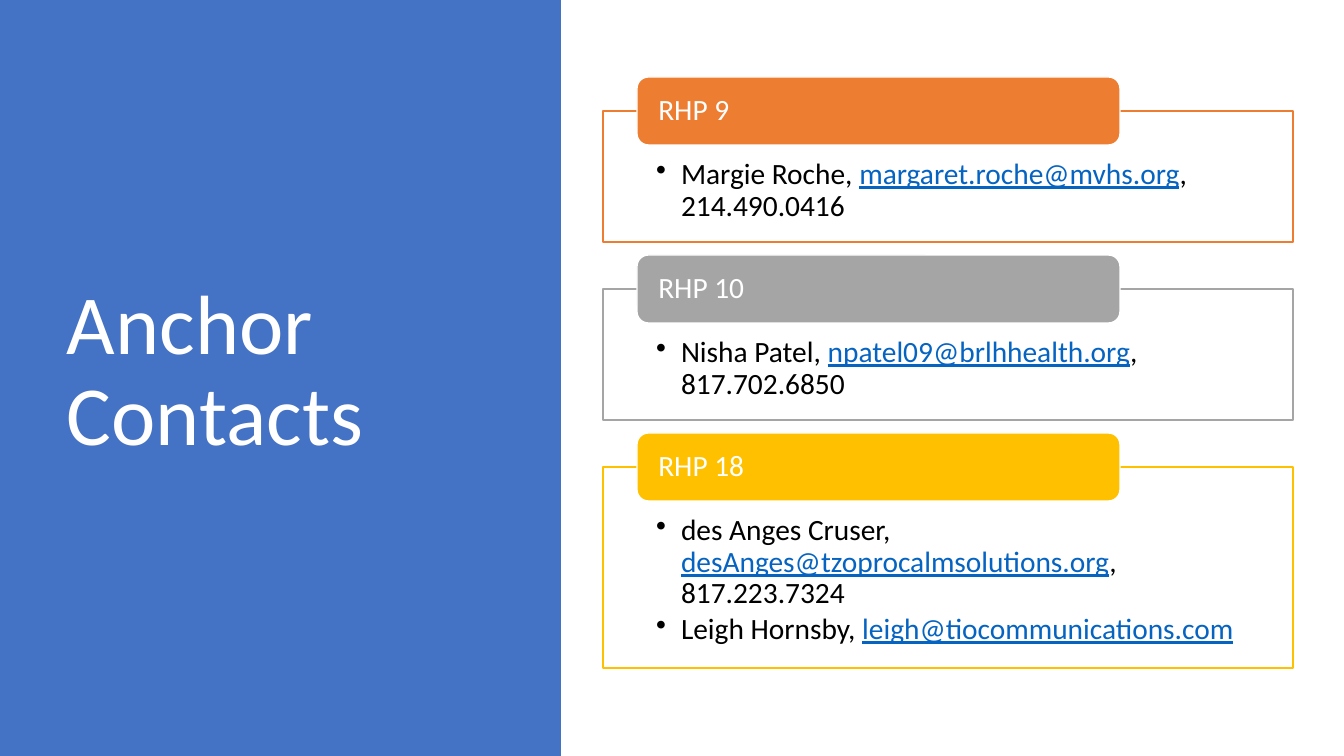
import pptx
import pptx.util
import pptx.dml.color
import pptx.enum.shapes
import pptx.enum.text
from lxml import etree

# Content: each card has a label, a colour, a height and its contacts
TITLE = "Anchor Contacts"
CARDS = [
    ("RHP 9", "orange", 131, [("Margie Roche, ", "margaret.roche@mvhs.org", ", 214.490.0416")]),
    ("RHP 10", "grey", 131, [("Nisha Patel, ", "npatel09@brlhhealth.org", ", 817.702.6850")]),
    ("RHP 18", "yellow", 201, [
        ("des Anges Cruser, ", "desAnges@tzoprocalmsolutions.org", ", 817.223.7324"),
        ("Leigh Hornsby, ", "leigh@tiocommunications.com", ""),
    ]),
]
COLORS = {
    "blue": "4472C4", "orange": "ED7D31", "grey": "A5A5A5", "yellow": "FFC000",
    "white": "FFFFFF", "black": "000000", "link": "0563C1",
}
FONT = "Calibri"

# Layout in px
SLIDE_W, SLIDE_H = 1344, 756
PANEL_W = 561
CARD_LEFT, CARD_TOP, CARD_W, CARD_GAP = 603, 111, 690, 47
TAB_LEFT, TAB_W, TAB_H = 637, 483, 68
BULLET_INDENT = 25
SHAPES = pptx.enum.shapes.MSO_SHAPE
ANCHORS = pptx.enum.text.MSO_ANCHOR


def px(length):
    return pptx.util.Emu(round(length * 914400 / 100.8))


def color(name):
    return pptx.dml.color.RGBColor.from_string(COLORS[name])


def add_block(page, kind, place, fill, line=None):
    shape = page.shapes.add_shape(kind, *map(px, place))
    shape.shadow.inherit = False
    shape.fill.solid()
    shape.fill.fore_color.rgb = color(fill)
    if line:
        shape.line.color.rgb = color(line)
        shape.line.width = pptx.util.Pt(1)
    else:
        shape.line.fill.background()
    return shape


def set_frame(shape, anchor, left, top, right, bottom):
    frame = shape.text_frame
    frame.word_wrap = True
    frame.vertical_anchor = anchor
    frame.margin_left, frame.margin_top = px(left), px(top)
    frame.margin_right, frame.margin_bottom = px(right), px(bottom)
    return frame


def style_para(para, size, names):
    para.alignment = pptx.enum.text.PP_ALIGN.LEFT
    para.line_spacing = 0.9
    for span, name in zip(para.runs, names):
        span.font.name = FONT
        span.font.size = pptx.util.Pt(size)
        span.font.color.rgb = color(name)
        span.font.underline = name == "link"


def add_bullet(para):
    props = para._p.get_or_add_pPr()
    props.set("marL", str(px(BULLET_INDENT)))
    props.set("indent", str(-px(BULLET_INDENT)))
    bullet = etree.SubElement(props, pptx.oxml.ns.qn("a:buChar"))
    bullet.set("char", "•")


def add_card(page, top, label, accent, height, contacts):
    # Outlined box with the contacts
    box = add_block(page, SHAPES.RECTANGLE, (CARD_LEFT, top, CARD_W, height), "white", accent)
    frame = set_frame(box, ANCHORS.TOP, 53, 48, 53, 16)
    for index, contact in enumerate(contacts):
        para = frame.add_paragraph() if index else frame.paragraphs[0]
        for words in filter(None, contact):
            para.add_run().text = words
        style_para(para, 21, ("black", "link", "black"))
        para.space_after = pptx.util.Pt(3)
        add_bullet(para)

    # Label tab centred on the top edge of the box
    place = (TAB_LEFT, top - TAB_H // 2, TAB_W, TAB_H)
    tab = add_block(page, SHAPES.ROUNDED_RECTANGLE, place, accent, "white")
    frame = set_frame(tab, ANCHORS.MIDDLE, 18, 0, 18, 0)
    frame.text = label
    style_para(frame.paragraphs[0], 21, ("white",))


def main():
    deck = pptx.Presentation()
    deck.slide_width, deck.slide_height = px(SLIDE_W), px(SLIDE_H)
    page = deck.slides.add_slide(deck.slide_layouts[6])

    # Title panel
    add_block(page, SHAPES.RECTANGLE, (0, 0, PANEL_W, SLIDE_H), "blue")
    title = page.shapes.add_textbox(*map(px, (57, 69, 419, 607)))
    frame = set_frame(title, ANCHORS.MIDDLE, 10, 5, 10, 5)
    frame.text = TITLE
    style_para(frame.paragraphs[0], 60, ("white",))

    # Contact cards, stacked with equal gaps
    top = CARD_TOP
    for label, accent, height, contacts in CARDS:
        add_card(page, top, label, accent, height, contacts)
        top += height + CARD_GAP

    deck.save("out.pptx")


if __name__ == "__main__":
    main()
